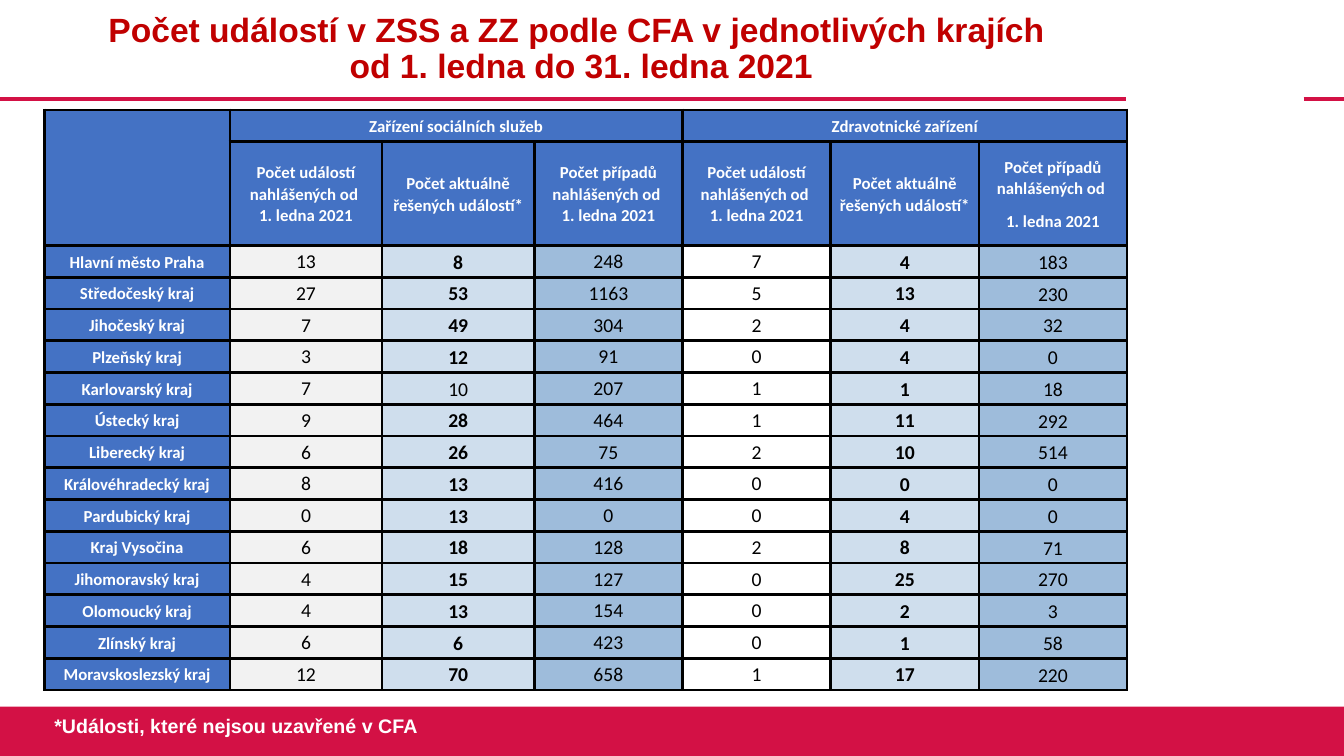
import pptx
import pptx.dml.color
import pptx.enum.shapes
import pptx.enum.text
import pptx.oxml
import pptx.oxml.ns
import pptx.util

Inches = pptx.util.Inches
Pt = pptx.util.Pt
RGBColor = pptx.dml.color.RGBColor
MIDDLE = pptx.enum.text.MSO_ANCHOR.MIDDLE
CENTER = pptx.enum.text.PP_ALIGN.CENTER

# Content
TITLE = "Počet událostí v ZSS a ZZ podle CFA v jednotlivých krajích \nod 1. ledna do 31. ledna 2021"
FOOTNOTE = "*Události, které nejsou uzavřené v CFA"
GROUPS = ["Zařízení sociálních služeb", "Zdravotnické zařízení"]
EVENTS = ["Počet událostí nahlášených od \n1. ledna 2021"]
OPEN_EVENTS = ["Počet aktuálně řešených událostí*"]
CASES = ["Počet případů nahlášených od \n1. ledna 2021"]
CASES_SPLIT = ["Počet případů nahlášených od ", "1. ledna 2021"]
HEADINGS = [EVENTS, OPEN_EVENTS, CASES, EVENTS, OPEN_EVENTS, CASES_SPLIT]
REGIONS = [
    ("Hlavní město Praha", 13, 8, 248, 7, 4, 183),
    ("Středočeský kraj", 27, 53, 1163, 5, 13, 230),
    ("Jihočeský kraj", 7, 49, 304, 2, 4, 32),
    ("Plzeňský kraj", 3, 12, 91, 0, 4, 0),
    ("Karlovarský kraj", 7, 10, 207, 1, 1, 18),
    ("Ústecký kraj", 9, 28, 464, 1, 11, 292),
    ("Liberecký kraj", 6, 26, 75, 2, 10, 514),
    ("Královéhradecký kraj", 8, 13, 416, 0, 0, 0),
    ("Pardubický kraj", 0, 13, 0, 0, 4, 0),
    ("Kraj Vysočina", 6, 18, 128, 2, 8, 71),
    ("Jihomoravský kraj", 4, 15, 127, 0, 25, 270),
    ("Olomoucký kraj", 4, 13, 154, 0, 2, 3),
    ("Zlínský kraj", 6, 6, 423, 0, 1, 58),
    ("Moravskoslezský kraj", 12, 70, 658, 1, 17, 220),
]
NOT_BOLD = ("Karlovarský kraj", 2)

THEME = {
    "title": "C00000", "accent": "D31145", "header": "4472C4",
    "white": "FFFFFF", "black": "000000",
    "title_font": "Arial", "table_font": "Calibri",
    "title_size": 24, "note_size": 14, "header_size": 12, "value_size": 14,
}
# Value columns: fill, bold, line spacing, space after
PLAIN = (None, False, None, None)
OPEN_STYLE = ("CFDEED", True, 1.05, 8)
VALUE_STYLES = [
    ("F2F2F2", False, None, None), OPEN_STYLE, ("9EBCDB", False, None, None),
    PLAIN, OPEN_STYLE, ("9EBCDB", False, 1.07, 8),
]

# Geometry in inches
SLIDE_WIDTH, SLIDE_HEIGHT = 13.33, 7.5
RULE_Y = 0.98
RULES = [(0, 11.17), (12.93, SLIDE_WIDTH)]
BAND_TOP = 7.01
TABLE_LEFT, TABLE_TOP, TABLE_HEIGHT = 0.44, 1.09, 5.76
COLUMN_WIDTHS = [1.84, 1.51, 1.51] + [1.47] * 4
HEADING_HEIGHT = 1.03


def color(name):
    return RGBColor.from_string(THEME.get(name, name))


def set_font(paragraph, name, size, color_name, bold):
    font = paragraph.font
    font.name, font.size, font.bold = name, Pt(size), bold
    font.color.rgb = color(color_name)


def add_borders(cell):
    properties = cell._tc.get_or_add_tcPr()
    for side in ("lnL", "lnR", "lnT", "lnB"):
        properties.append(pptx.oxml.parse_xml(
            f'<a:{side} {pptx.oxml.ns.nsdecls("a")} w="{Pt(2.25)}"><a:solidFill>'
            f'<a:srgbClr val="{THEME["black"]}"/></a:solidFill></a:{side}>'))


def fill_cell(cell, texts, style, size, color_name, side_margin):
    fill, bold, spacing, space_after = style
    if fill:
        cell.fill.solid()
        cell.fill.fore_color.rgb = color(fill)
    else:
        cell.fill.background()
    cell.vertical_anchor = MIDDLE
    cell.margin_left = cell.margin_right = Inches(side_margin)
    cell.margin_top, cell.margin_bottom = Inches(0.01), 0
    frame = cell.text_frame
    for index, text in enumerate(texts):
        paragraph = frame.add_paragraph() if index else frame.paragraphs[0]
        paragraph.text = text
        paragraph.alignment = CENTER
        if spacing:
            paragraph.line_spacing = spacing
            paragraph.space_after = Pt(space_after)
        set_font(paragraph, THEME["table_font"], size, color_name, bold)


def fill_header(cell, texts):
    fill_cell(cell, texts, ("header", True, 1.05, 8), THEME["header_size"], "white", 0.04)


def add_rules_and_band(slide):
    for start, end in RULES:
        rule = slide.shapes.add_connector(
            pptx.enum.shapes.MSO_CONNECTOR.STRAIGHT,
            Inches(start), Inches(RULE_Y), Inches(end), Inches(RULE_Y))
        rule.line.color.rgb = color("accent")
        rule.line.width = Pt(3)
        rule._element.spPr.append(pptx.oxml.parse_xml(
            f'<a:effectLst {pptx.oxml.ns.nsdecls("a")}/>'))
    band = slide.shapes.add_shape(
        pptx.enum.shapes.MSO_SHAPE.RECTANGLE, 0, Inches(BAND_TOP),
        Inches(SLIDE_WIDTH), Inches(SLIDE_HEIGHT - BAND_TOP))
    band.shadow.inherit = False
    band.fill.solid()
    band.fill.fore_color.rgb = color("accent")
    band.line.fill.background()


def add_title(slide):
    title = slide.shapes.title
    title.left, title.top = Inches(0.36), 0
    title.width, title.height = Inches(10.81), Inches(RULE_Y)
    frame = title.text_frame
    frame.auto_size = pptx.enum.text.MSO_AUTO_SIZE.NONE
    frame.vertical_anchor = MIDDLE
    paragraph = frame.paragraphs[0]
    paragraph.text = TITLE
    paragraph.alignment = CENTER
    paragraph.line_spacing = 0.9
    set_font(paragraph, THEME["title_font"], THEME["title_size"], "title", True)


def add_footnote(slide):
    box = slide.shapes.add_textbox(Inches(0.44), Inches(7.03), Inches(4.31), Inches(0.34))
    frame = box.text_frame
    frame.word_wrap = True
    frame.auto_size = pptx.enum.text.MSO_AUTO_SIZE.SHAPE_TO_FIT_TEXT
    paragraph = frame.paragraphs[0]
    paragraph.text = FOOTNOTE
    set_font(paragraph, THEME["title_font"], THEME["note_size"], "white", True)


def add_region_table(slide):
    row_count = len(REGIONS) + 2
    table = slide.shapes.add_table(
        row_count, len(COLUMN_WIDTHS), Inches(TABLE_LEFT), Inches(TABLE_TOP),
        Inches(sum(COLUMN_WIDTHS)), Inches(TABLE_HEIGHT)).table
    table.first_row = table.horz_banding = False
    for column, width in zip(table.columns, COLUMN_WIDTHS):
        column.width = Inches(width)
    row_height = (TABLE_HEIGHT - HEADING_HEIGHT) / (row_count - 1)
    for index, row in enumerate(table.rows):
        row.height = Inches(HEADING_HEIGHT if index == 1 else row_height)
    for cell in table.iter_cells():
        add_borders(cell)

    # Header rows
    table.cell(0, 0).merge(table.cell(1, 0))
    fill_header(table.cell(0, 0), [])
    for index, group in enumerate(GROUPS):
        first = 1 + 3 * index
        table.cell(0, first).merge(table.cell(0, first + 2))
        fill_header(table.cell(0, first), [group])
    for column, heading in enumerate(HEADINGS, 1):
        fill_header(table.cell(1, column), heading)

    # Region rows
    for row, (region, *values) in enumerate(REGIONS, 2):
        fill_header(table.cell(row, 0), [region])
        for column, (value, style) in enumerate(zip(values, VALUE_STYLES), 1):
            if (region, column) == NOT_BOLD:
                style = (style[0], False, *style[2:])
            fill_cell(table.cell(row, column), [str(value)], style,
                      THEME["value_size"], "black", 0.01)


def main():
    presentation = pptx.Presentation()
    presentation.slide_width = Inches(SLIDE_WIDTH)
    presentation.slide_height = Inches(SLIDE_HEIGHT)
    slide = presentation.slides.add_slide(presentation.slide_layouts[5])
    add_rules_and_band(slide)
    add_title(slide)
    add_footnote(slide)
    add_region_table(slide)
    presentation.save("out.pptx")


if __name__ == "__main__":
    main()
